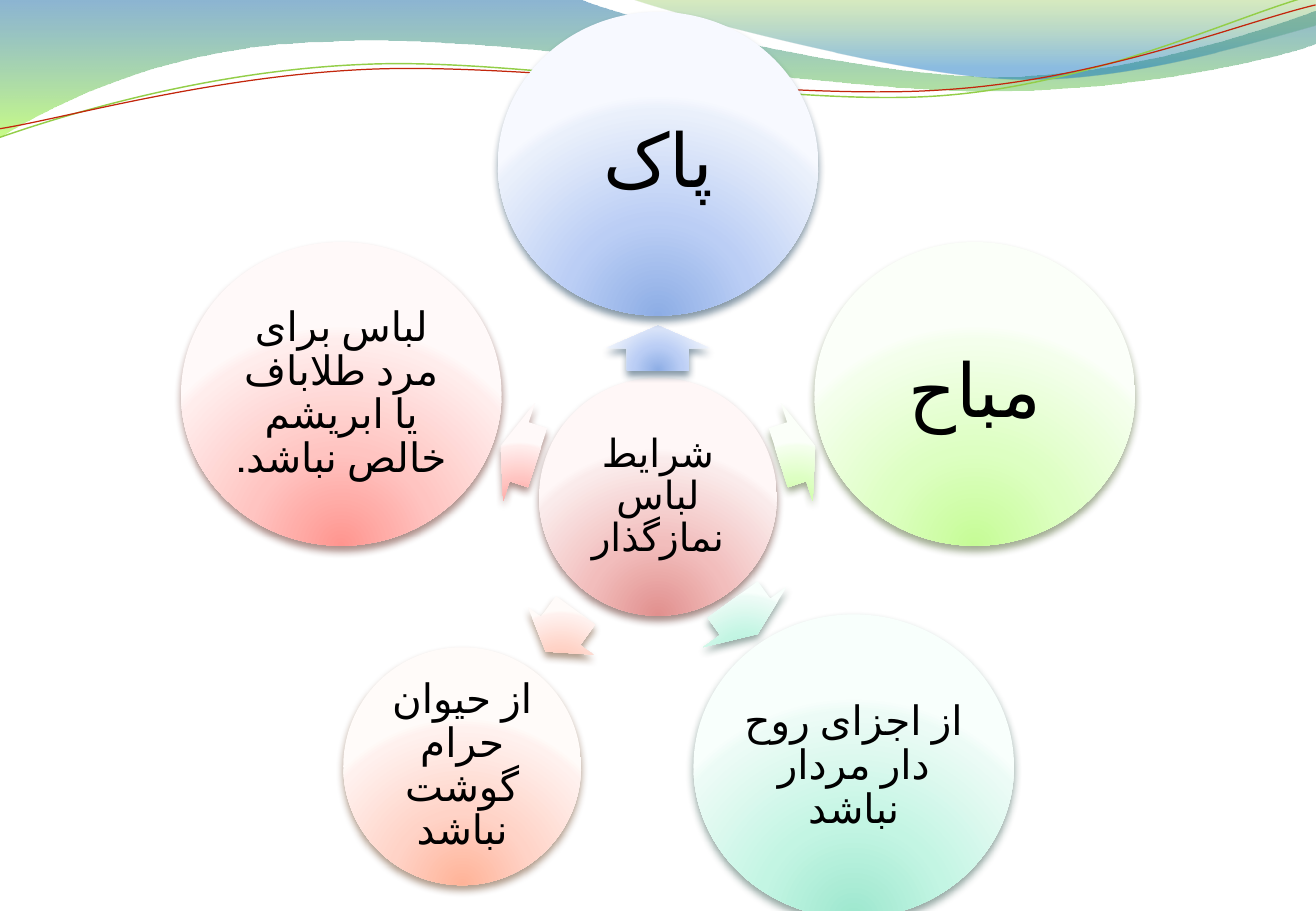
from math import cos, radians, sin
from pptx import Presentation
from pptx.dml.color import RGBColor
from pptx.enum.lang import MSO_LANGUAGE_ID
from pptx.enum.shapes import MSO_SHAPE
from pptx.enum.text import MSO_ANCHOR, PP_ALIGN
from pptx.oxml import parse_xml
from pptx.oxml.ns import nsdecls, qn
from pptx.util import Pt

ELLIPSE, RIGHT_ARROW = MSO_SHAPE.OVAL, MSO_SHAPE.RIGHT_ARROW
MIDDLE, CENTER = MSO_ANCHOR.MIDDLE, PP_ALIGN.CENTER
PERSIAN = MSO_LANGUAGE_ID.FARSI
SLIDE_WIDTH, SLIDE_HEIGHT = 780, 540
FONT = "Times New Roman"
DOWNWARD = '<a:lin ang="5400000" scaled="0"/>'
FROM_BELOW = ('<a:path path="circle">'
              '<a:fillToRect l="50000" t="130000" r="50000" b="-30000"/></a:path>')
GLOW_STOPS = (0, 43, 93, 100)

BANDS = [
    ([(0, "005A9E", 45), (100, "9CFA24", 55)], (0, 0),
     [[(343.4, -0.7)],
      [(370.8, 12.2), (517.7, 45.4), (591.8, 45.4)],
      [(665.3, 45.4), (747.4, 18.7), (779.8, 6.5)],
      [(780.5, 25.9)],
      [(766.8, 31.7), (678.2, 54.7), (581.8, 54)],
      [(485.3, 54), (298.1, 20.2), (200.9, 24.5)],
      [(100.8, 25.9), (36, 59.8), (-0.7, 81.4)]]),
    ([(0, "7EBE2C", 30), (80, "006BBD", 45)], (373.7, -0.7),
     [[(397.4, 7.9), (532.1, 44.6), (599.8, 46.8)],
      [(667.4, 49.7), (750.2, 23), (779.8, 15.1)],
      [(779.8, 0)]]),
]
STRANDS = [
    ("93CE48", 0.85, (0, 81.4),
     [[(37.4, 68.4), (123.1, 41.8), (216, 38.2)],
      [(308.2, 33.8), (462.2, 63.4), (555.8, 56.9)],
      [(649.4, 50.4), (732.2, 9.4), (778.3, -2.9)]]),
    ("C3260C", 0.75, (0, 76.3),
     [[(36.7, 70.6), (127.4, 44.6), (221, 41)],
      [(313.9, 37.4), (465.8, 59.8), (558.7, 53.3)],
      [(652.3, 47.5), (734.4, 13.7), (779.8, 2.9)]]),
]

LARGE, SMALL = (190, 180), (141, 141)
HUB = ("شرایط لباس نمازگذار", 23, 2.2, SMALL,
       ("E1908E", "F2BDBC", "FAEBEB", "FFF7F7"), "460C03")
CONDITIONS = [
    (("پاک", 44, 4.4, LARGE,
      ("8DADE5", "BBCEF5", "EAF0FB", "F7F9FF"), "032A48"), 88.2, 26.6),
    (("مباح", 44, 4.4, LARGE,
      ("C6FC96", "DDFFC2", "F4FFEC", "FBFFF9"), "3B531B"), 86.5, 23),
    (("از اجزای روح دار مردار نباشد", 24, 2.2, LARGE,
      ("9DE7CE", "C3F5E3", "ECFBF6", "F8FFFC"), "20493E"), 87.9, 25.2),
    (("از حیوان حرام گوشت نباشد", 24, 2.2, SMALL,
      ("FFB398", "FFD3C7", "FFF1EE", "FFFBF9"), "5B2D0A"), 98.2, 30.2),
    (("لباس برای مرد طلاباف يا ابريشم خالص نباشد.", 24, 2.2, LARGE,
      ("FF958F", "FFC4C1", "FFEDEC", "FFF9F9"), "56160B"), 86.5, 23),
]


def apply(target, values):
    for name, value in values.items():
        setattr(target, name, value)


def paint(colour_format, colour):
    colour_format.rgb = RGBColor.from_string(colour)


def fill_gradient(shape, stops, direction):
    shape.fill.gradient()
    plain = shape._element.spPr.find(qn("a:gradFill"))
    marks = "".join(
        f'<a:gs pos="{position * 1000}"><a:srgbClr val="{colour}">'
        f'<a:alpha val="{opacity * 1000}"/></a:srgbClr></a:gs>'
        for position, colour, opacity in stops)
    plain.getparent().replace(plain, parse_xml(
        f'<a:gradFill {nsdecls("a")} rotWithShape="0">'
        f'<a:gsLst>{marks}</a:gsLst>{direction}</a:gradFill>'))


def add_glowing(slide, kind, centre, size, colours, shadow):
    (x, y), (width, height) = centre, size
    shape = slide.shapes.add_shape(
        kind, Pt(x - width / 2), Pt(y - height / 2), Pt(width), Pt(height))
    stops = [(stop, colour, 100) for stop, colour in zip(GLOW_STOPS, colours)]
    fill_gradient(shape, stops, FROM_BELOW)
    shape.line.fill.background()
    shape.shadow.inherit = False
    shape._element.spPr.find(qn("a:effectLst")).append(parse_xml(
        f'<a:outerShdw {nsdecls("a")} blurRad="{Pt(4.5)}" dist="{Pt(3)}" '
        f'dir="5400000" rotWithShape="0"><a:srgbClr val="{shadow}">'
        '<a:alpha val="48000"/></a:srgbClr></a:outerShdw>'))
    return shape


def add_circle(slide, centre, content):
    wording, size, inset, extent, colours, shadow = content
    circle = add_glowing(slide, ELLIPSE, centre, extent, colours, shadow)
    frame = circle.text_frame
    margins = {f"margin_{side}": Pt(inset)
               for side in ("left", "top", "right", "bottom")}
    apply(frame, {"word_wrap": True, "vertical_anchor": MIDDLE, **margins})
    paragraph = frame.paragraphs[0]
    apply(paragraph, {"alignment": CENTER, "line_spacing": 0.9})
    paragraph._p.get_or_add_pPr().set("rtl", "1")
    run = paragraph.add_run()
    run.text = wording
    apply(run.font, {"size": Pt(size), "name": FONT, "language_id": PERSIAN})
    paint(run.font.color, "000000")


def bend(outline, segments):
    lines = iter(list(outline._element.spPr.iter(qn("a:lnTo"))))
    for segment in segments:
        corners = [next(lines) for _ in segment]
        if len(corners) == 3:
            curve = parse_xml(f'<a:cubicBezTo {nsdecls("a")}/>')
            corners[0].addprevious(curve)
            for corner in corners:
                curve.append(corner[0])
                corner.getparent().remove(corner)


def add_outline(slide, box, start, segments, closed):
    left, top = box[:2]
    points = [(Pt(left + x), Pt(top + y))
              for x, y in [start, *sum(segments, [])]]
    builder = slide.shapes.build_freeform(*points[0])
    builder.add_line_segments(points[1:], close=closed)
    outline = builder.convert_to_shape()
    bend(outline, segments)
    outline.shadow.inherit = False
    return outline


def add_waves(slide, box):
    for stops, start, segments in BANDS:
        band = add_outline(slide, box, start, segments, True)
        fill_gradient(band, stops, DOWNWARD)
        band.line.fill.background()
    for colour, width, start, segments in STRANDS:
        strand = add_outline(slide, box, start, segments, False)
        strand.fill.background()
        strand.line.width = Pt(width)
        paint(strand.line.color, colour)


def add_radial_diagram(slide, box):
    left, top, width, height = box
    hub = (left + width / 2, top + height / 2)
    ring = 197.4
    add_circle(slide, hub, HUB)
    for index, (content, reach, length) in enumerate(CONDITIONS):
        angle = (270 + index * 360 / len(CONDITIONS)) % 360
        across, down = cos(radians(angle)), sin(radians(angle))
        extent, colours, shadow = content[3:]
        arrow = add_glowing(
            slide, RIGHT_ARROW, (hub[0] + reach * across, hub[1] + reach * down),
            (length, 0.34 * extent[1]), colours, shadow)
        arrow.rotation = angle
        arrow.adjustments[0], arrow.adjustments[1] = 0.6, 0.5
        add_circle(slide, (hub[0] + ring * across, hub[1] + ring * down), content)


def main():
    deck = Presentation()
    apply(deck, {"slide_width": Pt(SLIDE_WIDTH), "slide_height": Pt(SLIDE_HEIGHT)})
    slide = deck.slides.add_slide(deck.slide_layouts[6])
    add_waves(slide, (0, 0, SLIDE_WIDTH, 82))
    add_radial_diagram(slide, (107, 7, 566, 575))
    deck.save("out.pptx")


if __name__ == "__main__":
    main()
